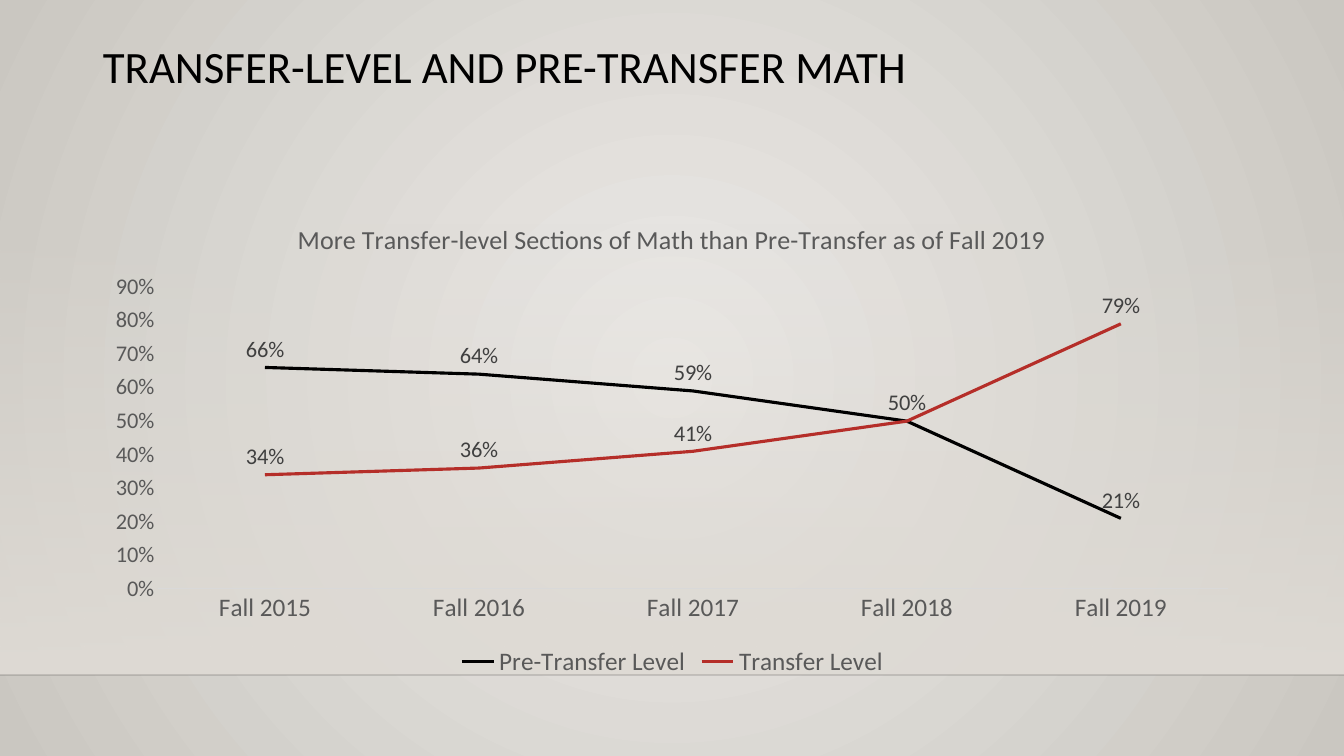
"""Build a slide with a line chart of math sections by level."""
from dataclasses import dataclass

from lxml.etree import SubElement as Sub
from pptx import Presentation
from pptx.chart.data import CategoryChartData as Data
from pptx.dml.color import RGBColor as Rgb
from pptx.enum.chart import XL_CHART_TYPE as Kind
from pptx.enum.chart import XL_LABEL_POSITION as Spot
from pptx.enum.chart import XL_LEGEND_POSITION as Side
from pptx.enum.chart import XL_MARKER_STYLE as Mark
from pptx.enum.chart import XL_TICK_MARK as Tick
from pptx.enum.shapes import MSO_CONNECTOR as Link
from pptx.enum.shapes import MSO_SHAPE as Form
from pptx.oxml import parse_xml
from pptx.oxml.ns import nsdecls, qn
from pptx.util import Pt

SCALE = 914400 / 100.8
WIDE, HIGH = 1344, 756
LEFT, SPAN = 93, 1159
WALL, FLOOR = 223, 675
CHART_TOP, CHART_HIGH = 202, 480
TITLE_SPOT = {"x": 200, "y": 14}
PLOT_SPOT = {"x": 65, "y": 85, "w": 1070, "h": 302}
FONT = "Calibri"
INK = {
    "black": "000000", "rule": "000001", "red": "B52E29", "axis": "D9D9D9",
    "text": "595959", "label": "404040", "light": "ECEAE7", "dark": "CAC7C1",
    "band": "DFDBD5",
}
ROUND = ('<a:path path="circle"><a:fillToRect l="50000" t="50000" '
         'r="50000" b="50000"/></a:path>')
DOWN = '<a:lin ang="5400000" scaled="0"/>'
TERMS = [f"Fall {year}" for year in range(2015, 2020)]


@dataclass
class Level:
    name: str
    color: str
    shares: tuple[float, ...]
    mute: tuple[int, ...] = ()


@dataclass
class Stop:
    color: str
    place: int
    alpha: int = 100


LEVELS = [
    Level("Pre-Transfer Level", "black", (0.66, 0.64, 0.59, 0.5, 0.21), (3,)),
    Level("Transfer Level", "red", (0.34, 0.36, 0.41, 0.5, 0.79)),
]


def px(*sizes: int) -> list[int]:
    return [round(size * SCALE) for size in sizes]


def ink(name: str) -> Rgb:
    return Rgb.from_string(INK[name])


def style(font, size: float, color: str) -> None:
    font.name, font.size, font.bold = FONT, Pt(size), False
    font.color.rgb = ink(color)


def stroke(line, color: str, width: float) -> None:
    line.color.rgb = ink(color)
    line.width = Pt(width)


def percent(labels) -> None:
    labels.number_format = "0%"
    labels.number_format_is_linked = False


def blend(fill, root, stops: list[Stop], shade: str) -> None:
    fill.gradient()
    steps = "".join(
        f'<a:gs pos="{stop.place * 1000}"><a:srgbClr val="{INK[stop.color]}">'
        f'<a:alpha val="{stop.alpha * 1000}"/></a:srgbClr></a:gs>'
        for stop in stops)
    new = parse_xml(f'<a:gradFill {nsdecls("a")} rotWithShape="1">'
                    f'<a:gsLst>{steps}</a:gsLst>{shade}</a:gradFill>')
    old = next(root.iter(qn("a:gradFill")))
    old.getparent().replace(old, new)


def place(node, slot: int, spots: dict[str, int]) -> None:
    for old in node.findall(qn("c:layout")):
        node.remove(old)
    frame = Sub(node, qn("c:layout"))
    node.insert(slot, frame)
    box = Sub(frame, qn("c:manualLayout"))
    if "w" in spots:
        Sub(box, qn("c:layoutTarget"), val="inner")
    for mode in ("xMode", "yMode"):
        Sub(box, qn(f"c:{mode}"), val="edge")
    for key, spot in spots.items():
        whole = SPAN if key in "xw" else CHART_HIGH
        Sub(box, qn(f"c:{key}"), val=str(spot / whole))


def hush(line, index: int) -> None:
    tags = line.data_labels._element
    tag = Sub(tags, qn("c:dLbl"))
    Sub(tag, qn("c:idx"), val=str(index))
    Sub(tag, qn("c:delete"), val="1")
    tags.insert(0, tag)


def paint(line, level: Level) -> None:
    line.smooth = False
    line.marker.style = Mark.NONE
    stroke(line.format.line, level.color, 2.25)
    tags = line.data_labels
    tags.show_value = True
    tags.position = Spot.ABOVE
    percent(tags)
    style(tags.font, 16, "label")
    for index in sorted(level.mute, reverse=True):
        hush(line, index)


def scale(chart) -> None:
    terms, shares = chart.category_axis, chart.value_axis
    for axis, size in ((terms, 18), (shares, 16)):
        axis.major_tick_mark = axis.minor_tick_mark = Tick.NONE
        axis.has_major_gridlines = False
        style(axis.tick_labels.font, size, "text")
    stroke(terms.format.line, "axis", 0.75)
    shares.format.line.fill.background()
    shares.minimum_scale, shares.maximum_scale = 0, 0.9
    shares.major_unit = 0.1
    percent(shares.tick_labels)


def plot(slide) -> None:
    data = Data(number_format="0%")
    data.categories = TERMS
    for level in LEVELS:
        data.add_series(level.name, level.shares)
    chart = slide.shapes.add_chart(
        Kind.LINE, *px(LEFT, CHART_TOP, SPAN, CHART_HIGH), data).chart
    style(chart.font, 10, "black")
    chart.has_title = True
    par = chart.chart_title.text_frame.paragraphs[0]
    par.text = "More Transfer-level Sections of Math than Pre-Transfer as of Fall 2019"
    style(par.font, 18.6, "text")
    chart.has_legend = True
    chart.legend.position = Side.BOTTOM
    chart.legend.include_in_layout = False
    style(chart.legend.font, 18, "text")
    scale(chart)
    lines = chart.plots[0]
    lines.vary_by_categories = False
    for line, level in zip(lines.series, LEVELS):
        paint(line, level)
    root = chart.element.find(qn("c:chart"))
    place(root.find(qn("c:title")), 1, TITLE_SPOT)
    place(root.find(qn("c:plotArea")), 0, PLOT_SPOT)


def stage(slide) -> None:
    blend(slide.background.fill, slide.element,
          [Stop("light", 0), Stop("dark", 100)], ROUND)
    band = slide.shapes.add_shape(
        Form.RECTANGLE, *px(0, WALL, WIDE, FLOOR - WALL))
    band.shadow.inherit = False
    band.line.fill.background()
    blend(band.fill, band.element,
          [Stop("band", 0, 0), Stop("band", 100)], DOWN)
    rule = slide.shapes.add_connector(
        Link.STRAIGHT, *px(0, FLOOR, WIDE, FLOOR))
    stroke(rule.line, "rule", 1)
    props = rule.element.spPr
    Sub(next(props.iter(qn("a:srgbClr"))), qn("a:alpha"), val="20000")
    Sub(props, qn("a:effectLst"))


def head(slide) -> None:
    frame = slide.shapes.add_textbox(*px(LEFT, 40, SPAN, 146)).text_frame
    frame.word_wrap = True
    par = frame.paragraphs[0]
    par.text = "TRANSFER-LEVEL AND PRE-TRANSFER MATH"
    par.line_spacing = 0.9
    style(par.font, 32, "black")


def main() -> None:
    deck = Presentation()
    deck.slide_width, deck.slide_height = px(WIDE, HIGH)
    slide = deck.slides.add_slide(deck.slide_layouts[6])
    for draw in (stage, head, plot):
        draw(slide)
    deck.save("out.pptx")


if __name__ == "__main__":
    main()
